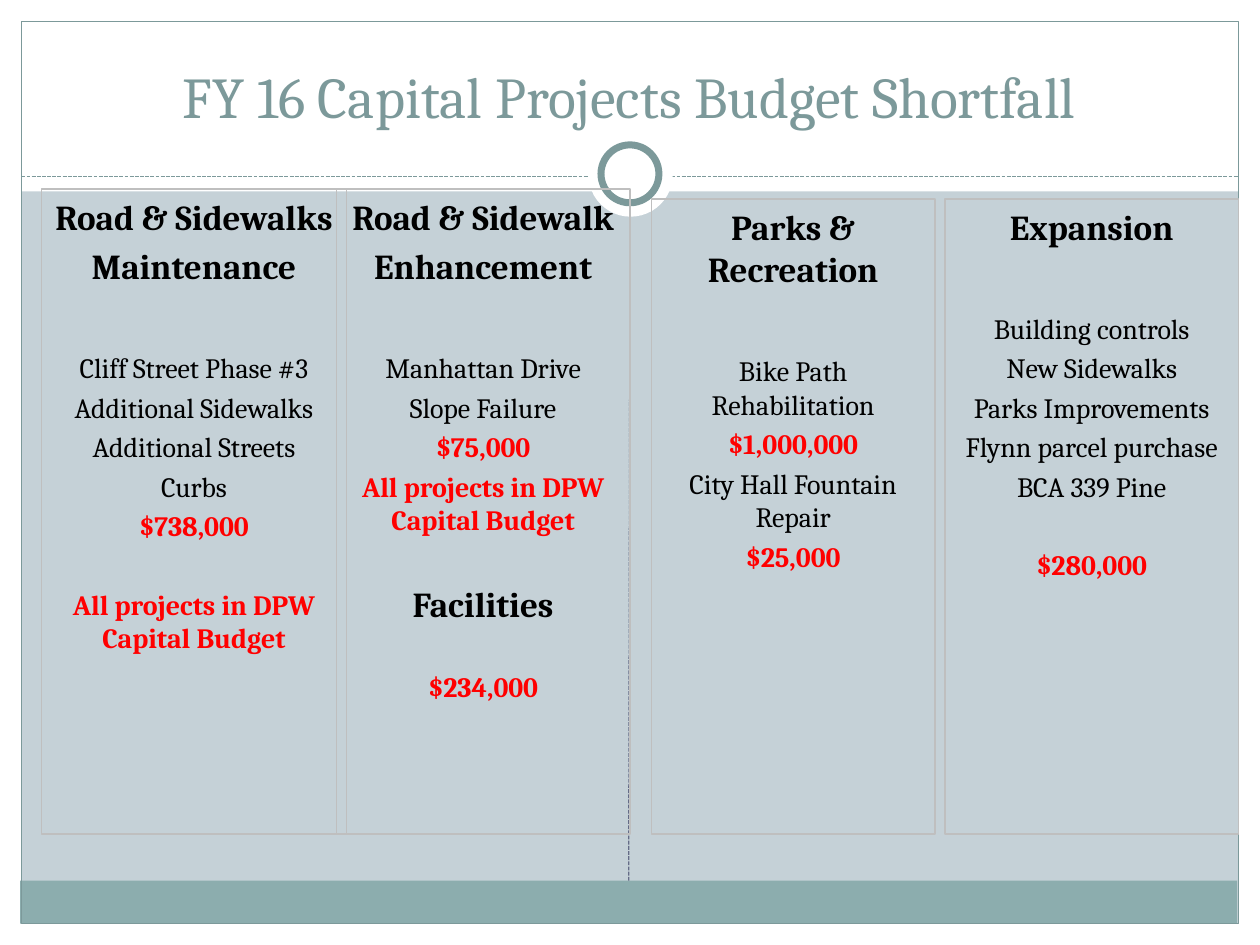
from lxml import etree
from pptx import Presentation
from pptx import util as u
from pptx.dml.color import RGBColor
from pptx.enum import dml, shapes, text
from pptx.oxml.ns import qn

COLORS = {
    "back": "C5D1D7", "white": "FFFFFF", "band": "8CADAE", "teal": "7C999A",
    "divider": "646B86", "border": "BFBFBF", "black": "000000", "red": "FF0000",
}


def rgb(name):
    return RGBColor.from_string(COLORS[name])


def write(p, words, size=16, color="black", bold=False, gap=0, spaced=True):
    """Fill a centred paragraph; gap is the size of the empty line kept above it."""
    p.alignment = text.PP_ALIGN.CENTER
    p.space_before = u.Pt(round(0.21 * size + 1.39 * gap, 2) if spaced else 0)
    r = p.add_run()
    r.text = words
    r.font.name = "Cambria"
    r.font.size = u.Pt(size)
    r.font.bold = bold
    r.font.color.rgb = rgb(color)


def head(words, gap=0):
    return words, dict(size=20, bold=True, gap=gap)


def item(words, gap=0):
    return words, dict(gap=gap)


def alert(words, gap=0):
    return words, dict(color="red", bold=True, gap=gap)


class Deck:
    """Holds the style and the current slide."""

    def __init__(self, width, height):
        self.prs = Presentation()
        self.prs.slide_width, self.prs.slide_height = u.Inches(width), u.Inches(height)
        self.s = self.prs.slides.add_slide(self.prs.slide_layouts[6])
        self.s.background.fill.solid()
        self.s.background.fill.fore_color.rgb = rgb("back")

    def shape(self, box, fill=None, line=None, weight=0.75, kind="RECTANGLE"):
        sp = self.s.shapes.add_shape(shapes.MSO_SHAPE[kind], *map(u.Inches, box))
        sp.shadow.inherit = False
        if fill:
            sp.fill.solid()
            sp.fill.fore_color.rgb = rgb(fill)
        else:
            sp.fill.background()
        if line:
            sp.line.color.rgb = rgb(line)
            sp.line.width = u.Pt(weight)
        else:
            sp.line.fill.background()
        return sp

    def dashes(self, start, end, color):
        sp = self.s.shapes.add_connector(
            shapes.MSO_CONNECTOR.STRAIGHT, *map(u.Inches, start + end))
        sp.line.color.rgb = rgb(color)
        sp.line.width = u.Pt(0.75)
        sp.line.dash_style = dml.MSO_LINE.SQUARE_DOT
        etree.SubElement(sp._element.spPr, qn("a:effectLst"))
        return sp

    def title(self, box, words):
        tf = self.s.shapes.add_textbox(*map(u.Inches, box)).text_frame
        tf.word_wrap = True
        tf.vertical_anchor = text.MSO_ANCHOR.BOTTOM
        write(tf.paragraphs[0], words, size=33, color="teal", spaced=False)

    def column(self, box, entries):
        tf = self.shape(box, line="border").text_frame
        tf.word_wrap = True
        tf.vertical_anchor = text.MSO_ANCHOR.TOP
        for i, (words, style) in enumerate(entries):
            p = tf.add_paragraph() if i else tf.paragraphs[0]
            write(p, words, **style)


def main():
    deck = Deck(10, 7.5)
    for box in ((0, 7.33, 10, 0.17), (0, 0, 10, 1.52),
                (0, 0, 0.17, 7.5), (9.83, 0, 0.17, 7.5)):
        deck.shape(box, fill="white")
    band = deck.shape((0.16, 6.99, 9.66, 0.34), fill="band")
    deck.shape((0.17, 0.17, 9.66, 7.16), line="teal")
    deck.dashes((0.17, 1.4), (9.83, 1.4), "teal")
    deck.shape((4.67, 1.05, 0.67, 0.67), fill="white", kind="OVAL")
    deck.shape((4.77, 1.15, 0.46, 0.46), "white", "teal", 4, "OVAL")
    deck.dashes((4.99, 6.99), (5, 1.72), "divider").begin_connect(band, 0)
    deck.title((0.33, 0.25, 9.33, 0.83), "FY 16 Capital Projects Budget Shortfall")

    covered = "All projects in DPW Capital Budget"
    columns = (
        (0.33, 1.5, 2.42, [
            head("Road & Sidewalks"), head("Maintenance"),
            item("Cliff Street Phase #3", 24), item("Additional Sidewalks"),
            item("Additional Streets"), item("Curbs"),
            alert("$738,000"), alert(covered, 16)]),
        (2.67, 1.5, 2.33, [
            head("Road & Sidewalk"), head("Enhancement"),
            item("Manhattan Drive", 24), item("Slope Failure"),
            alert("$75,000"), alert(covered),
            head("Facilities", 16), alert("$234,000", 16)]),
        (5.17, 1.58, 2.25, [
            head("Parks & Recreation"),
            item("Bike Path Rehabilitation", 24), alert("$1,000,000"),
            item("City Hall Fountain Repair"), alert("$25,000")]),
        (7.5, 1.58, 2.33, [
            head("Expansion"),
            item("Building controls", 24), item("New Sidewalks"),
            item("Parks Improvements"), item("Flynn parcel purchase"),
            item("BCA 339 Pine"), alert("$280,000", 16)]),
    )
    bottom = 6.62
    for left, top, width, entries in columns:
        deck.column((left, top, width, bottom - top), entries)
    deck.prs.save("out.pptx")


if __name__ == "__main__":
    main()
